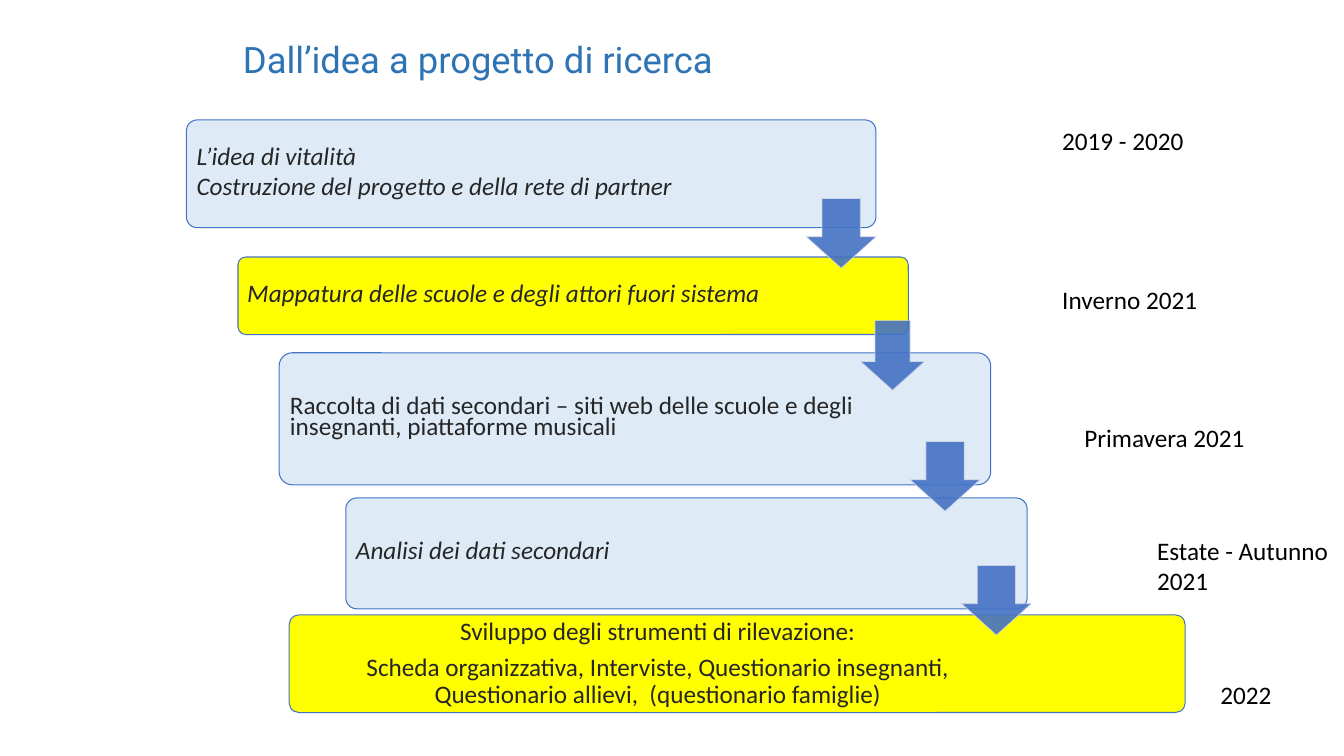
from pptx import Presentation
from pptx.dml.color import RGBColor
from pptx.enum.shapes import MSO_SHAPE
from pptx.enum.text import MSO_ANCHOR, PP_ALIGN
from pptx.oxml import parse_xml
from pptx.oxml.ns import nsdecls, qn
from pptx.util import Pt

COLORS = {
    "title": "2E74B5", "text": "262626", "date": "000000",
    "pale": "DEEBF7", "yellow": "FFFF00",
    "blue": "4472C4", "arrow_edge": "CFD5EA",
}

# Box (left, top, width, height), fill, italic, centred, line spacing, paragraphs
STEPS = [
    ((133.2, 85.7, 492.5, 77), "pale", True, False, 0.7,
     ["L’idea di vitalità", "Costruzione del progetto e della rete di partner"]),
    ((170, 183.6, 478.8, 55.4), "yellow", True, False, 0.7,
     ["Mappatura delle scuole e degli attori fuori sistema"]),
    ((199.4, 252, 508.3, 94.3), "pale", False, False, 0.7,
     ["Raccolta di dati secondari – siti web delle scuole e degli insegnanti, "
      "piattaforme musicali"]),
    ((247, 355.7, 486.7, 79.2), "pale", True, False, 0.7,
     ["Analisi dei dati secondari"]),
    ((206.6, 439.2, 640, 69.8), "yellow", False, True, 0.9,
     ["Sviluppo degli strumenti di rilevazione:",
      "Scheda organizzativa, Interviste, Questionario insegnanti, "
      "Questionario allievi,  (questionario famiglie)"]),
]

ARROWS = [
    (576, 141.8, 49.7, 49.7), (614.9, 229, 45.4, 49.7),
    (650.2, 315.4, 49.7, 49.7), (686.9, 403.9, 49.7, 49.7),
]

DATES = [
    ((751.7, 85.7, 175, 28.8), "2019 - 2020"),
    ((751.7, 199.4, 175, 28.8), "Inverno 2021"),
    ((767.5, 298.1, 175, 28.8), "Primavera 2021"),
    ((819.4, 378.7, 140, 51.1), "Estate - Autunno 2021"),
    ((864.7, 481.7, 84.2, 28.8), "2022"),
]


def color(name):
    return RGBColor.from_string(COLORS[name])


def points(box):
    return [Pt(length) for length in box]


def style_font(font, name, size, color_name, italic=False):
    font.name, font.size, font.italic = name, Pt(size), italic
    font.color.rgb = color(color_name)


def add_preset(page, preset, box, fill, edge, edge_width):
    shape = page.shapes.add_shape(preset, *points(box))
    shape.shadow.inherit = False
    shape.fill.solid()
    shape.fill.fore_color.rgb = color(fill)
    shape.line.color.rgb = color(edge)
    shape.line.width = Pt(edge_width)
    return shape


def add_title(page, box, text):
    title = page.shapes.title
    title.left, title.top, title.width, title.height = points(box)
    frame = title.text_frame
    frame.text = text
    frame.word_wrap = False
    frame.vertical_anchor = MSO_ANCHOR.TOP
    para = frame.paragraphs[0]
    para.alignment = PP_ALIGN.LEFT
    style_font(para.font, "Roboto", 26, "title")


def add_step(page, box, fill, italic, centred, spacing, lines):
    step = add_preset(page, MSO_SHAPE.ROUNDED_RECTANGLE, box, fill, "blue", 0.75)
    step.adjustments[0] = 0.1
    frame = step.text_frame
    frame.word_wrap = True
    frame.vertical_anchor = MSO_ANCHOR.MIDDLE
    frame.margin_left = frame.margin_top = frame.margin_bottom = Pt(5)
    # Keep the text clear of the arrow at the right
    frame.margin_right = Pt(0.185 * box[2])
    frame.text = "\n".join(lines)
    for para in frame.paragraphs:
        para.alignment = PP_ALIGN.CENTER if centred else PP_ALIGN.LEFT
        para.line_spacing = spacing
        para.space_after = Pt(6.3)
        style_font(para.font, "Calibri", 18, "text", italic)


def add_arrow(page, box):
    arrow = add_preset(page, MSO_SHAPE.DOWN_ARROW, box, "blue", "arrow_edge", 0.5)
    arrow.adjustments[0] = 0.55
    arrow.adjustments[1] = 0.45
    # Slight transparency on fill and line
    for tint in arrow.element.iter(qn("a:srgbClr")):
        tint.append(parse_xml(f'<a:alpha {nsdecls("a")} val="90000"/>'))


def add_date(page, box, text):
    frame = page.shapes.add_textbox(*points(box)).text_frame
    frame.word_wrap = True
    frame.text = text
    style_font(frame.paragraphs[0].font, "Calibri", 18, "date")


def main():
    deck = Presentation()
    deck.slide_width, deck.slide_height = Pt(960), Pt(540)
    page = deck.slides.add_slide(deck.slide_layouts[5])

    add_title(page, (166.3, 23, 417.6, 38.9), "Dall’idea a progetto di ricerca")
    for step in STEPS:
        add_step(page, *step)
    for box in ARROWS:
        add_arrow(page, box)
    for box, text in DATES:
        add_date(page, box, text)

    deck.save("out.pptx")


if __name__ == "__main__":
    main()
